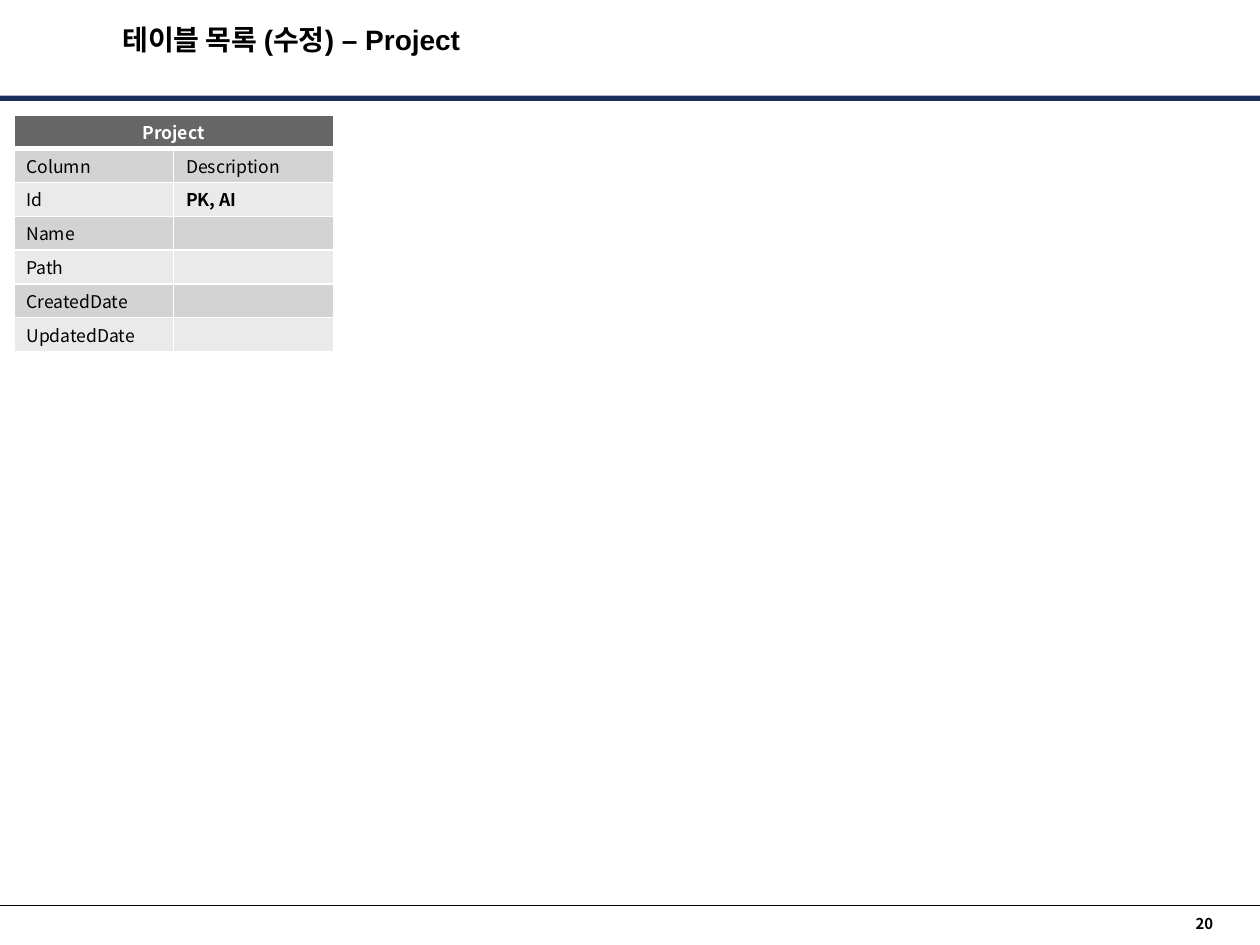
from lxml.etree import SubElement
from pptx import Presentation
from pptx.dml.color import RGBColor
from pptx.enum.shapes import MSO_CONNECTOR, MSO_SHAPE
from pptx.enum.text import MSO_ANCHOR, MSO_AUTO_SIZE, PP_ALIGN
from pptx.oxml.ns import qn
from pptx.util import Pt

TITLE = "테이블 목록 (수정) – Project"
PAGE_NUMBER = "20"
TABLE_NAME = "Project"
TABLE_ROWS = [
    ("Column", "Description"),
    ("Id", "PK, AI"),
    ("Name", ""),
    ("Path", ""),
    ("CreatedDate", ""),
    ("UpdatedDate", ""),
]
BOLD_CELLS = {"PK, AI"}

COLORS = {
    "text": "000000",
    "white": "FFFFFF",
    "bar": "1B2E5A",
    "header": "666666",
    "dark_band": "D3D3D3",
    "light_band": "EAEAEA",
}
KOREAN_FONT = "Noto Sans CJK KR"
SLIDE_WIDTH, SLIDE_HEIGHT = 717.84, 538.56
TABLE_LEFT, TABLE_TOP = 7.92, 65.52
COLUMN_WIDTH, ROW_HEIGHT = 91, 19.25
CELL_TEXT_SIZE = 10


def color(name):
    return RGBColor.from_string(COLORS[name])


def write_text(frame, text, size, font=KOREAN_FONT, ink="text", bold=False,
               align=PP_ALIGN.LEFT):
    paragraph = frame.paragraphs[0]
    paragraph.alignment = align
    if not text:
        # An empty cell keeps the row height only if its end mark has a size.
        SubElement(paragraph._p, qn("a:endParaRPr"), sz=str(size * 100))
        return
    run = paragraph.add_run()
    run.text = text
    run.font.size = Pt(size)
    run.font.name = font
    run.font.bold = bold
    run.font.color.rgb = color(ink)
    SubElement(run._r.get_or_add_rPr(), qn("a:ea"), typeface=KOREAN_FONT)


def add_text_box(slide, text, left, top, width, height, margins=None, wrap=True,
                 **text_format):
    frame = slide.shapes.add_textbox(Pt(left), Pt(top), Pt(width), Pt(height)).text_frame
    frame.word_wrap = wrap
    if margins is not None:
        frame.auto_size = MSO_AUTO_SIZE.SHAPE_TO_FIT_TEXT
        frame.margin_left = frame.margin_right = Pt(margins)
        frame.margin_top = frame.margin_bottom = Pt(margins)
    write_text(frame, text, **text_format)


def set_borders(cell, top, bottom):
    properties = cell._tc.get_or_add_tcPr()
    for side, width in (("L", 1), ("R", 1), ("T", top), ("B", bottom)):
        line = SubElement(properties, qn(f"a:ln{side}"), w=str(Pt(width)))
        fill = SubElement(line, qn("a:solidFill"))
        SubElement(fill, qn("a:srgbClr"), val=COLORS["white"])


def fill_cell(cell, text, background, top_border=1, bottom_border=1, **text_format):
    set_borders(cell, top_border, bottom_border)
    cell.fill.solid()
    cell.fill.fore_color.rgb = color(background)
    cell.vertical_anchor = MSO_ANCHOR.MIDDLE
    cell.margin_top = cell.margin_bottom = Pt(2)
    write_text(cell.text_frame, text, CELL_TEXT_SIZE, **text_format)


def add_column_table(slide):
    row_count = len(TABLE_ROWS) + 1
    table = slide.shapes.add_table(
        row_count, 2, Pt(TABLE_LEFT), Pt(TABLE_TOP),
        Pt(2 * COLUMN_WIDTH), Pt(row_count * ROW_HEIGHT)).table
    table.first_row = table.horz_banding = False
    for column in table.columns:
        column.width = Pt(COLUMN_WIDTH)
    for row in table.rows:
        row.height = Pt(ROW_HEIGHT)

    header = table.cell(0, 0)
    header.merge(table.cell(0, 1))
    fill_cell(header, TABLE_NAME, "header", bottom_border=3,
              ink="white", bold=True, align=PP_ALIGN.CENTER)
    for row_index, texts in enumerate(TABLE_ROWS, start=1):
        background = "dark_band" if row_index % 2 else "light_band"
        for column_index, text in enumerate(texts):
            fill_cell(table.cell(row_index, column_index), text, background,
                      top_border=3 if row_index == 1 else 1, bold=text in BOLD_CELLS)


def add_frame_lines(slide):
    bar = slide.shapes.add_shape(
        MSO_SHAPE.RECTANGLE, 0, Pt(54.6), Pt(SLIDE_WIDTH), Pt(3))
    bar.shadow.inherit = False
    bar.fill.solid()
    bar.fill.fore_color.rgb = color("bar")
    bar.line.fill.background()

    footer_line = slide.shapes.add_connector(
        MSO_CONNECTOR.STRAIGHT, Pt(-0.72), Pt(516.24), Pt(719.28), Pt(516.24))
    footer_line.line.color.rgb = color("text")
    footer_line.line.width = Pt(0.75)
    SubElement(footer_line._element.spPr, qn("a:effectLst"))


def main():
    presentation = Presentation()
    presentation.slide_width = Pt(SLIDE_WIDTH)
    presentation.slide_height = Pt(SLIDE_HEIGHT)
    slide = presentation.slides.add_slide(presentation.slide_layouts[6])

    add_frame_lines(slide)
    add_text_box(slide, PAGE_NUMBER, 679.68, 521.28, 11.52, 10.08, margins=0, wrap=False,
                 size=8.5, bold=True, align=PP_ALIGN.RIGHT)
    add_column_table(slide)
    add_text_box(slide, TITLE, 9.36, 9.36, 313.2, 33.84,
                 size=16, font="Arial", bold=True, align=PP_ALIGN.CENTER)
    presentation.save("out.pptx")


if __name__ == "__main__":
    main()
